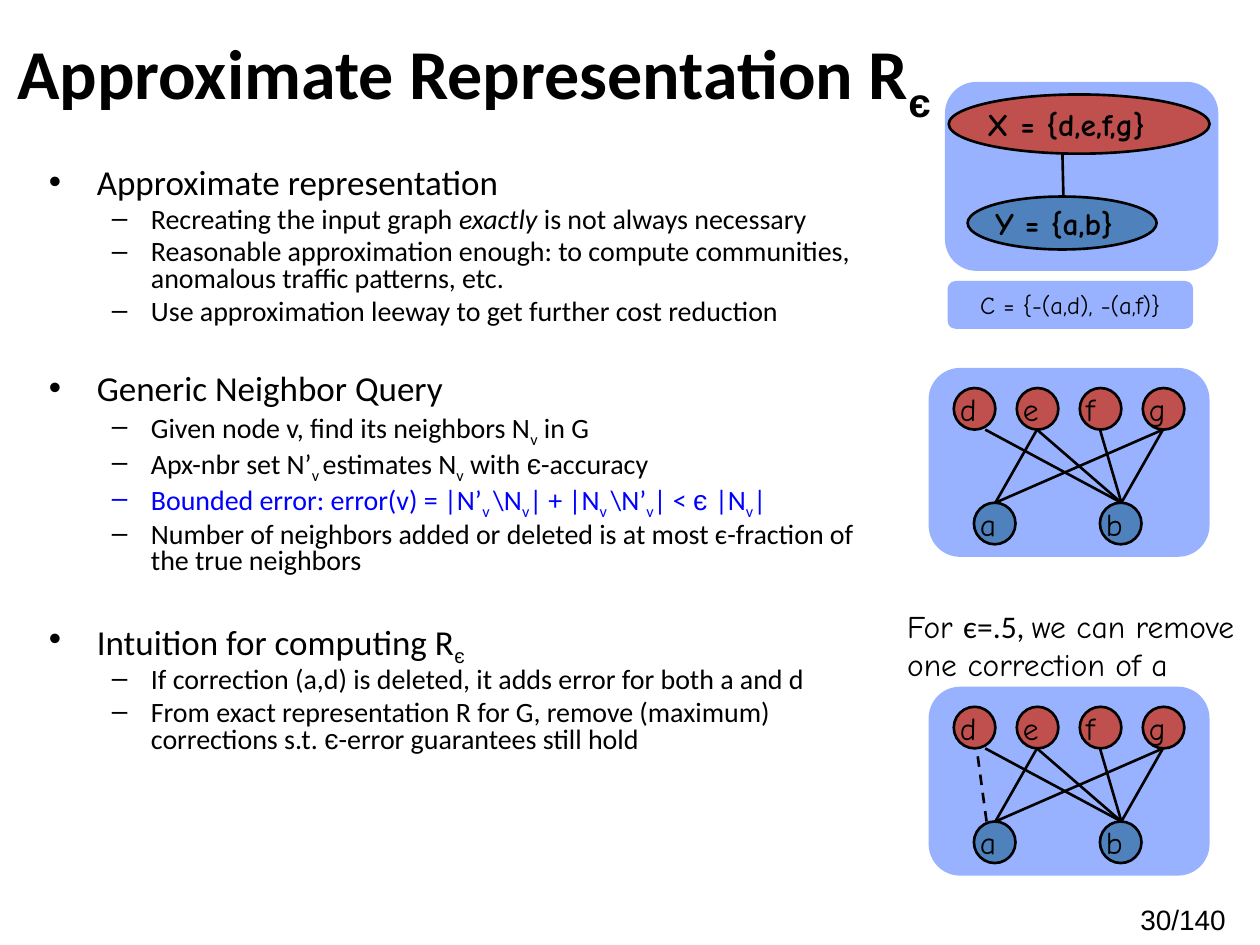
from dataclasses import dataclass

from lxml import etree
from pptx import Presentation
from pptx.dml.color import RGBColor
from pptx.enum.dml import MSO_LINE
from pptx.enum.shapes import MSO_CONNECTOR, MSO_SHAPE
from pptx.enum.text import MSO_ANCHOR, PP_ALIGN
from pptx.oxml.ns import qn
from pptx.util import Inches, Pt

STRAIGHT = MSO_CONNECTOR.STRAIGHT
OVAL, ROUNDED = MSO_SHAPE.OVAL, MSO_SHAPE.ROUNDED_RECTANGLE
MIDDLE, TOP = MSO_ANCHOR.MIDDLE, MSO_ANCHOR.TOP
LEFT, CENTER = PP_ALIGN.LEFT, PP_ALIGN.CENTER
DASH = MSO_LINE.DASH

BLACK, BLUE = "000000", "0000FF"
PANEL, RED_NODE, BLUE_NODE = "3366FF", "C0504D", "4F81BD"
BODY_FONT, SYMBOL_FONT, GRAPH_FONT = "Calibri", "Arial", "Comic Neue"
NODE_SIZE, UPPER_Y, LOWER_Y = 0.33, 0.16, 1.07


@dataclass
class Span:
    text: str
    font: str = BODY_FONT
    sub: bool = False
    italic: bool = False
    bold: bool = False


@dataclass
class Bullet:
    spans: list[Span]
    level: int = 1
    before: float = 3.2
    color: str = BLACK


@dataclass
class Box:
    left: float
    top: float
    width: float
    height: float

    def lengths(self) -> list[int]:
        return [Inches(v) for v in (self.left, self.top, self.width, self.height)]


def rgb(value: str) -> RGBColor:
    return RGBColor.from_string(value)


def sub(text: str) -> Span:
    return Span(text, sub=True)


def epsilon(text: str = "є", lowered: bool = False, bold: bool = False) -> Span:
    return Span(text, SYMBOL_FONT, sub=lowered, bold=bold)


def add_spans(paragraph, spans: list[Span], size: float, color: str = BLACK) -> None:
    for span in spans:
        run = paragraph.add_run()
        run.text = span.text
        font = run.font
        font.name, font.size = span.font, Pt(size)
        font.bold, font.italic = span.bold, span.italic
        font.color.rgb = rgb(color)
        if span.sub:
            run._r.get_or_add_rPr().set("baseline", "-25000")


def add_text(slide, box: Box, spans: list[Span], size: float, align=LEFT, anchor=TOP):
    frame = slide.shapes.add_textbox(*box.lengths()).text_frame
    frame.word_wrap = True
    frame.vertical_anchor = anchor
    frame.paragraphs[0].alignment = align
    add_spans(frame.paragraphs[0], spans, size)
    return frame


def clear_insets(frame) -> None:
    frame.margin_left = frame.margin_right = frame.margin_top = frame.margin_bottom = 0


def add_label(shape, span: Span, size: float, align=LEFT) -> None:
    frame = shape.text_frame
    clear_insets(frame)
    frame.word_wrap = False
    frame.vertical_anchor = MIDDLE
    frame.paragraphs[0].alignment = align
    add_spans(frame.paragraphs[0], [span], size)


def add_panel(slide, box: Box):
    """Half-transparent rounded background."""
    panel = slide.shapes.add_shape(ROUNDED, *box.lengths())
    panel.shadow.inherit = False
    panel.adjustments[0] = 0.167
    panel.fill.solid()
    panel.fill.fore_color.rgb = rgb(PANEL)
    color = panel._element.spPr.find(qn("a:solidFill")).find(qn("a:srgbClr"))
    etree.SubElement(color, qn("a:alpha"), val="50000")
    panel.line.fill.background()
    return panel


def add_node(slide, box: Box, label: str, fill: str, bold: bool = False) -> None:
    node = slide.shapes.add_shape(OVAL, *box.lengths())
    node.shadow.inherit = False
    node.fill.solid()
    node.fill.fore_color.rgb = rgb(fill)
    node.line.color.rgb = rgb(BLACK)
    node.line.width = Pt(1.5)
    add_label(node, Span(label, GRAPH_FONT, bold=bold), 18)


def add_edge(slide, x1: float, y1: float, x2: float, y2: float, dash=None) -> None:
    ends = [Inches(v) for v in (x1, y1, x2, y2)]
    edge = slide.shapes.add_connector(STRAIGHT, *ends)
    edge.line.color.rgb = rgb(BLACK)
    edge.line.width = Pt(1.5)
    if dash:
        edge.line.dash_style = dash
    etree.SubElement(edge._element.spPr, qn("a:effectLst"))


def add_bipartite_graph(slide, top: float) -> None:
    add_panel(slide, Box(7.37, top, 2.23, 1.5))
    rows = [("defg", 7.57, 0.5, UPPER_Y, RED_NODE), ("ab", 7.73, 1, LOWER_Y, BLUE_NODE)]
    for names, left, step, offset, fill in rows:
        for i, name in enumerate(names):
            add_node(slide, Box(left + i * step, top + offset, NODE_SIZE, NODE_SIZE), name, fill)
    ends = {"d": 7.82, "e": 8.23, "f": 8.73, "g": 9.23, "a": 7.9, "b": 8.9}
    for lower, upper in ("bg", "bf", "be", "bd", "ag", "ae"):
        add_edge(slide, ends[lower], top + LOWER_Y, ends[upper], top + UPPER_Y + NODE_SIZE)


def add_bullets(slide, box: Box, bullets: list[Bullet]) -> None:
    frame = slide.shapes.add_textbox(*box.lengths()).text_frame
    frame.word_wrap = True
    levels = [("•", 0.38, 0.38, 20), ("–", 0.81, 0.31, 16)]
    for i, bullet in enumerate(bullets):
        mark, margin, hanging, size = levels[bullet.level]
        paragraph = frame.add_paragraph() if i else frame.paragraphs[0]
        properties = paragraph._p.get_or_add_pPr()
        properties.set("marL", str(Inches(margin)))
        properties.set("indent", str(-Inches(hanging)))
        etree.SubElement(properties, qn("a:buFont"), typeface="Arial")
        etree.SubElement(properties, qn("a:buChar"), char=mark)
        paragraph.level = bullet.level
        paragraph.line_spacing = 0.8
        paragraph.space_before = Pt(bullet.before)
        add_spans(paragraph, bullet.spans, size, bullet.color)


BULLETS = [
    Bullet([Span("Approximate representation")], 0, 0),
    Bullet([Span("Recreating the input graph "), Span("exactly ", italic=True),
            Span("is not always necessary")]),
    Bullet([Span("Reasonable approximation enough: to compute communities, "
                 "anomalous traffic patterns, etc.")]),
    Bullet([Span("Use approximation leeway to get further cost reduction")]),
    Bullet([Span("Generic Neighbor Query")], 0, 27.5),
    Bullet([Span("Given node v, find its neighbors N"), sub("v"), Span(" in G")]),
    Bullet([Span("Apx-nbr set N’"), sub("v "), Span("estimates N"), sub("v"),
            Span(" with "), epsilon(), Span("-accuracy")]),
    Bullet([Span("Bounded error: error(v) = |N’"), sub("v "), Span("\\N"), sub("v"),
            Span("| + |N"), sub("v "), Span("\\N’"), sub("v"), Span("| < "),
            epsilon("є "), Span("|N"), sub("v"), Span("|")], color=BLUE),
    Bullet([Span("Number of neighbors added or deleted is at most є-fraction of "
                 "the true neighbors")]),
    Bullet([Span("Intuition for computing R"), epsilon(lowered=True)], 0, 27.5),
    Bullet([Span("If correction (a,d) is deleted, it adds error for both a and d")]),
    Bullet([Span("From exact representation R for G, remove (maximum) corrections s.t. "),
            epsilon(), Span("-error guarantees still hold")]),
]


def main() -> None:
    deck = Presentation()
    deck.slide_width, deck.slide_height = Inches(10), Inches(7.5)
    slide = deck.slides.add_slide(deck.slide_layouts[6])

    title = [Span("Approximate Representation R", bold=True), epsilon(lowered=True, bold=True)]
    add_text(slide, Box(0.04, -0.01, 9, 1.25), title, 40, anchor=MIDDLE)
    add_bullets(slide, Box(0.29, 1.29, 6.86, 5.44), BULLETS)

    corrections = add_panel(slide, Box(7.52, 2.23, 1.95, 0.38))
    add_label(corrections, Span("C = {-(a,d), -(a,f)}", GRAPH_FONT), 14, CENTER)
    add_panel(slide, Box(7.5, 0.65, 2.17, 1.5))
    add_node(slide, Box(7.68, 1.56, 1.5, 0.42), "Y = {a,b}", BLUE_NODE, bold=True)
    add_edge(slide, 8.44, 1.56, 8.43, 1.13)
    add_node(slide, Box(7.53, 0.75, 2.07, 0.47), "X = {d,e,f,g}", RED_NODE, bold=True)

    add_bipartite_graph(slide, 2.92)
    caption = add_text(slide, Box(7.2, 4.82, 2.73, 0.48), [
        Span("For ", GRAPH_FONT), Span("є=.5, "), Span("we can remove", GRAPH_FONT)], 18)
    clear_insets(caption)
    caption.paragraphs[0].add_line_break()
    add_spans(caption.paragraphs[0], [Span("one correction of a", GRAPH_FONT)], 18)
    add_bipartite_graph(slide, 5.45)
    add_edge(slide, 7.83, 6.52, 7.75, 5.93, DASH)

    add_text(slide, Box(8.81, 7.11, 1.16, 0.39), [Span("30/140", SYMBOL_FONT)], 16, CENTER)
    deck.save("out.pptx")


if __name__ == "__main__":
    main()
